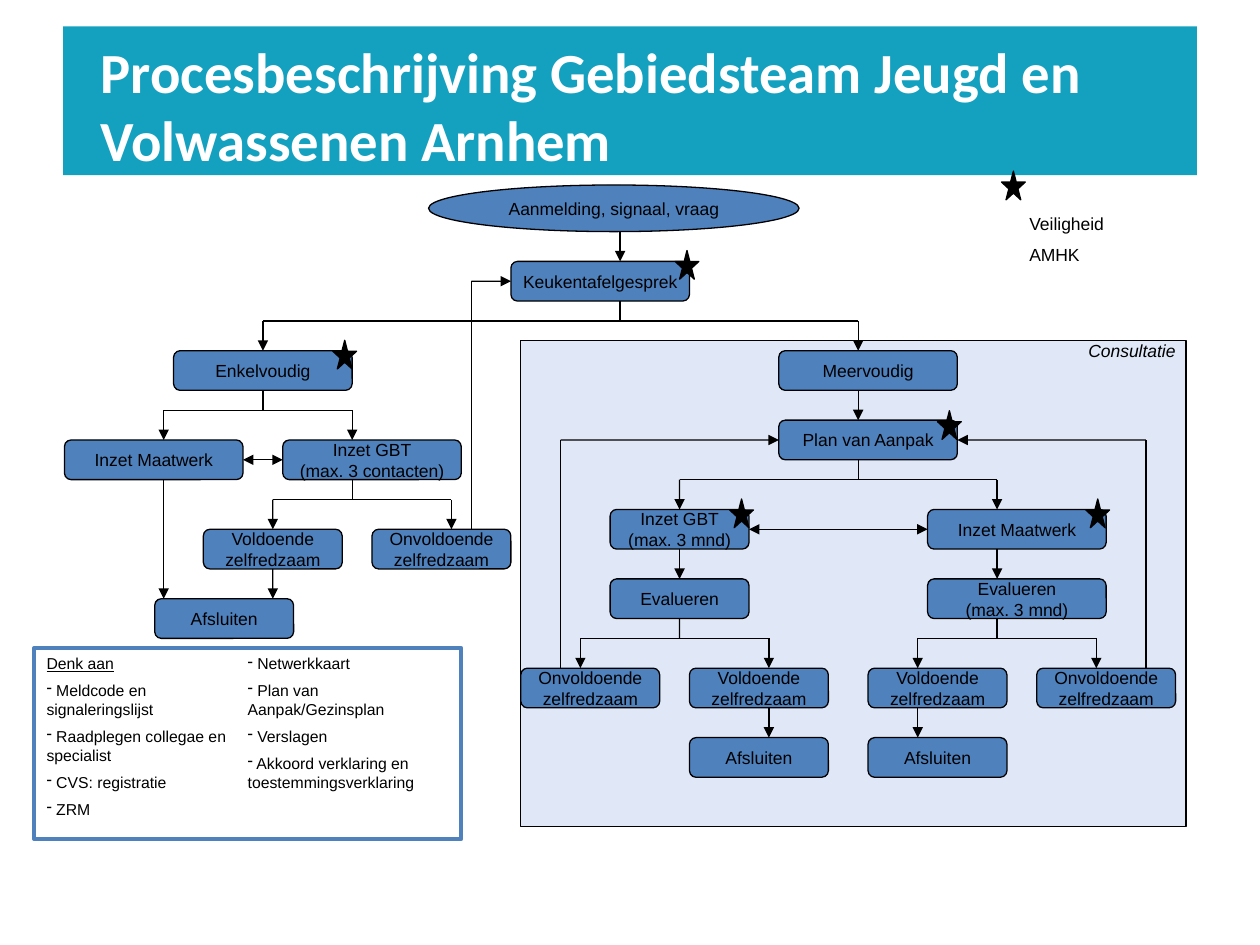
from dataclasses import dataclass

from lxml.etree import SubElement
from pptx import Presentation
from pptx.dml.color import RGBColor
from pptx.enum.shapes import MSO_CONNECTOR as Connector, MSO_SHAPE as Preset
from pptx.enum.text import MSO_ANCHOR as Anchor, MSO_AUTO_SIZE as AutoSize, PP_ALIGN as Align
from pptx.oxml.ns import qn
from pptx.util import Cm, Pt


@dataclass(frozen=True)
class Theme:
    banner: str = "14A1C0"
    box: str = "4F81BD"
    panel: str = "3366CC"
    ink: str = "000000"
    paper: str = "FFFFFF"
    title_font: str = "Calibri"
    body_font: str = "Arial"
    title_size: float = 32.4
    body_size: float = 10
    note_size: float = 9
    hairline: float = 0.75
    frame: float = 2


THEME = Theme()
ROW_HEIGHT = 0.8
WIDE, NARROW = 3.6, 2.8
ENOUGH = ["Voldoende", "zelfredzaam"]
NOT_ENOUGH = ["Onvoldoende", "zelfredzaam"]


def write_text(shape, lines, size=THEME.body_size, font=THEME.body_font, color=THEME.ink,
               align=Align.LEFT, anchor=Anchor.TOP, wrap=True, gap=0,
               bold=False, italic=False, heading=False, bullet=None):
    frame = shape.text_frame
    frame.auto_size = AutoSize.NONE
    frame.word_wrap = wrap
    frame.vertical_anchor = anchor
    for index, line in enumerate(lines):
        paragraph = frame.paragraphs[0] if index == 0 else frame.add_paragraph()
        paragraph.alignment = align
        paragraph.space_before = Pt(gap if index else 0)
        is_heading = heading and index == 0
        if bullet and not is_heading:
            SubElement(paragraph._p.get_or_add_pPr(), qn("a:buChar")).set("char", bullet)
        run = paragraph.add_run()
        run.text = line
        run.font.name = font
        run.font.size = Pt(size)
        run.font.color.rgb = RGBColor.from_string(color)
        run.font.bold = bold
        run.font.italic = italic
        run.font.underline = is_heading


class FlowSlide:
    def __init__(self, presentation, theme):
        self.theme = theme
        self.slide = presentation.slides.add_slide(presentation.slide_layouts[5])
        self.sites = []

    def title(self, text, left, top, width, height):
        shape = self.slide.shapes.title
        shape.left, shape.top, shape.width, shape.height = map(Cm, (left, top, width, height))
        shape.fill.solid()
        shape.fill.fore_color.rgb = RGBColor.from_string(self.theme.banner)
        frame = shape.text_frame
        frame.margin_left, frame.margin_top, frame.margin_bottom = Cm(0.76), Cm(0.16), 0
        write_text(shape, [text], self.theme.title_size, self.theme.title_font,
                   self.theme.paper, anchor=Anchor.MIDDLE, bold=True)

    def shape(self, preset, left, top, width, height, fill, line=None, weight=None):
        shape = self.slide.shapes.add_shape(preset, *map(Cm, (left, top, width, height)))
        shape.shadow.inherit = False
        shape.fill.solid()
        shape.fill.fore_color.rgb = RGBColor.from_string(fill)
        shape.line.color.rgb = RGBColor.from_string(line or self.theme.ink)
        shape.line.width = Pt(weight or self.theme.hairline)
        return shape

    def panel(self, left, top, width, height, opacity):
        shape = self.shape(Preset.RECTANGLE, left, top, width, height, self.theme.panel)
        color = shape.fill._xPr.find(qn("a:solidFill"))[0]
        SubElement(color, qn("a:alpha")).set("val", str(opacity * 1000))

    def step(self, lines, left, top, width, height=ROW_HEIGHT, preset=Preset.ROUNDED_RECTANGLE):
        shape = self.shape(preset, left, top, width, height, self.theme.box)
        write_text(shape, lines, align=Align.CENTER, anchor=Anchor.MIDDLE, wrap=False)
        if preset == Preset.ROUNDED_RECTANGLE:
            middle_x, middle_y = left + width / 2, top + height / 2
            points = [(middle_x, top), (left, middle_y),
                      (middle_x, top + height), (left + width, middle_y)]
            self.sites += [(shape, site, point) for site, point in enumerate(points)]

    def star(self, left, top):
        self.shape(Preset.STAR_5_POINT, left, top, 0.48, 0.58, self.theme.ink)

    def label(self, lines, left, top, width, height, **text_format):
        shape = self.slide.shapes.add_textbox(*map(Cm, (left, top, width, height)))
        write_text(shape, lines, **text_format)

    def checklist(self, lines, left, top, width, height):
        shape = self.shape(Preset.RECTANGLE, left, top, width, height,
                           self.theme.paper, self.theme.box, self.theme.frame)
        write_text(shape, lines, self.theme.note_size, gap=4.5, heading=True, bullet="-")
        shape.text_frame._txBody.bodyPr.set("numCol", "2")

    def line(self, start, end, head=False, tail=False):
        connector = self.slide.shapes.add_connector(Connector.STRAIGHT, *map(Cm, start + end))
        connector.line.color.rgb = RGBColor.from_string(self.theme.ink)
        connector.line.width = Pt(self.theme.hairline)
        for point, join in ((start, connector.begin_connect), (end, connector.end_connect)):
            for shape, site, (x, y) in self.sites:
                if abs(x - point[0]) < 0.05 and abs(y - point[1]) < 0.05:
                    join(shape, site)
        outline = connector.line._get_or_add_ln()
        for tag, shown in (("a:headEnd", head), ("a:tailEnd", tail)):
            if shown:
                SubElement(outline, qn(tag)).set("type", "triangle")
        SubElement(connector._element.spPr, qn("a:effectLst"))

    def fork(self, x, top, branches):
        bar = top + 0.4
        self.line((x, top), (x, bar))
        self.line((branches[0], bar), (branches[-1], bar))
        for branch in branches:
            self.line((branch, bar), (branch, top + 1), tail=True)

    def loop(self, x, bottom, target_x, target_y):
        self.line((x, bottom), (x, target_y))
        self.line((x, target_y), (target_x, target_y), tail=True)


def main():
    presentation = Presentation()
    presentation.slide_width, presentation.slide_height = Cm(25.4), Cm(19.05)
    flow = FlowSlide(presentation, THEME)

    flow.title("Procesbeschrijving Gebiedsteam Jeugd en Volwassenen Arnhem", 1.27, 0.53, 22.86, 3)
    flow.checklist(["Denk aan", " Meldcode en signaleringslijst",
                    " Raadplegen collegae en specialist", " CVS: registratie", " ZRM",
                    " Netwerkkaart", " Plan van Aanpak/Gezinsplan", " Verslagen",
                    " Akkoord verklaring en toestemmingsverklaring"], 0.69, 13.06, 8.61, 3.86)
    flow.panel(10.5, 6.86, 13.41, 9.8, opacity=15)

    flow.step(["Aanmelding, signaal, vraag"], 8.64, 3.73, 7.47, 0.94, Preset.OVAL)
    for lines, left, top, width in (
        (["Keukentafelgesprek"], 10.3, 5.27, WIDE),
        (["Enkelvoudig"], 3.5, 7.07, WIDE),
        (["Meervoudig"], 15.7, 7.07, WIDE),
        (["Plan van Aanpak"], 15.7, 8.47, WIDE),
        (["Inzet Maatwerk"], 1.3, 8.87, WIDE),
        (["Inzet GBT", "(max. 3 contacten)"], 5.7, 8.87, WIDE),
        (ENOUGH, 4.1, 10.67, NARROW),
        (NOT_ENOUGH, 7.5, 10.67, NARROW),
        (["Afsluiten"], 3.12, 12.07, NARROW),
        (["Inzet GBT", "(max. 3 mnd)"], 12.3, 10.27, NARROW),
        (["Inzet Maatwerk"], 18.7, 10.27, WIDE),
        (["Evalueren"], 12.3, 11.67, NARROW),
        (["Evalueren", "(max. 3 mnd)"], 18.7, 11.67, WIDE),
        (NOT_ENOUGH, 10.5, 13.47, NARROW),
        (ENOUGH, 13.9, 13.47, NARROW),
        (ENOUGH, 17.5, 13.47, NARROW),
        (NOT_ENOUGH, 20.9, 13.47, NARROW),
        (["Afsluiten"], 13.9, 14.87, NARROW),
        (["Afsluiten"], 17.5, 14.87, NARROW),
    ):
        flow.step(lines, left, top, width)

    for x, top, branches in (
        (12.5, 6.07, (5.3, 17.3)),
        (5.3, 7.87, (3.3, 7.1)),
        (7.1, 9.67, (5.5, 9.1)),
        (17.3, 9.27, (13.7, 20.1)),
        (13.7, 12.47, (11.7, 15.5)),
        (20.1, 12.47, (18.5, 22.1)),
    ):
        flow.fork(x, top, branches)
    for x, top, bottom in (
        (12.5, 4.67, 5.27), (17.3, 7.87, 8.47), (3.3, 9.67, 12.07), (5.5, 11.47, 12.07),
        (13.7, 11.07, 11.67), (20.1, 11.07, 11.67), (15.5, 14.27, 14.87), (18.5, 14.27, 14.87),
    ):
        flow.line((x, top), (x, bottom), tail=True)
    for left, right, y in ((4.9, 5.7, 9.27), (15.1, 18.7, 10.67)):
        flow.line((left, y), (right, y), head=True, tail=True)
    flow.loop(9.5, 10.67, 10.3, 5.67)
    flow.loop(11.3, 13.47, 15.7, 8.87)
    flow.loop(23.1, 13.47, 19.3, 8.87)

    for left, top in ((13.61, 5.05), (18.9, 8.28), (14.71, 10.06),
                      (21.89, 10.06), (6.71, 6.86), (20.19, 3.45)):
        flow.star(left, top)
    flow.label(["Veiligheid", "AMHK"], 20.5, 4.17, 3, 1.32, gap=5.5)
    flow.label(["Consultatie"], 21.69, 6.73, 2.59, 0.69, italic=True)

    presentation.save("out.pptx")


if __name__ == "__main__":
    main()
